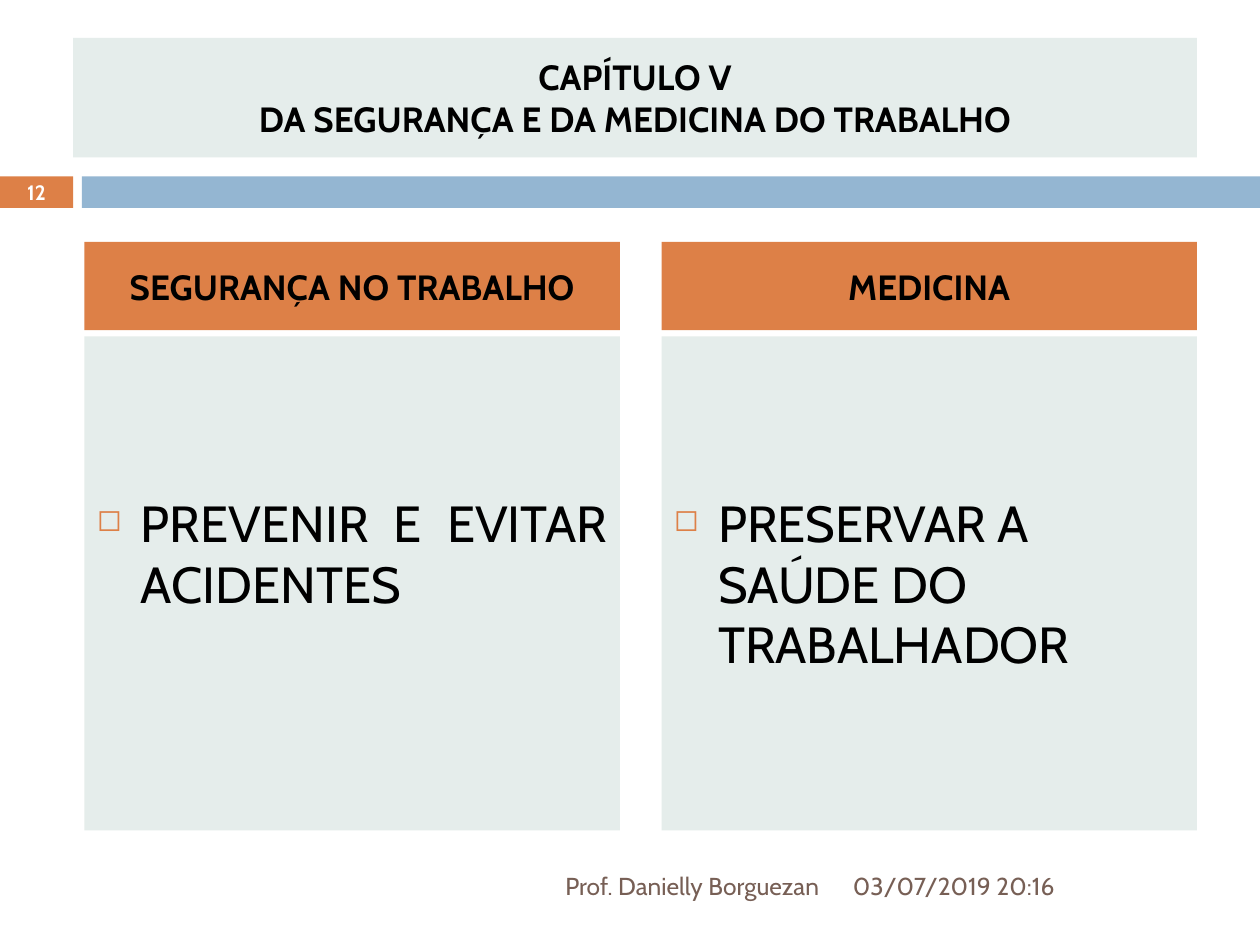
from lxml import etree
from pptx import Presentation
from pptx.dml.color import RGBColor
from pptx.enum.shapes import MSO_SHAPE
from pptx.enum.text import MSO_ANCHOR, PP_ALIGN
from pptx.oxml.ns import qn
from pptx.util import Pt

EMU_PER_PX = 9144  # 100 px to the inch
FONT = "Cabin"
ORANGE, BLUE, PALE = "DD8047", "94B6D2", "E5EDEB"
BLACK, WHITE, BROWN = "000000", "FFFFFF", "775F55"


def px(length):
    return length * EMU_PER_PX


def color(hex_code):
    return RGBColor.from_string(hex_code)


class SlideBuilder:
    def __init__(self, slide):
        self.shapes = slide.shapes

    def set_text(self, shape, text, size, ink, align, bold=False, anchor=MSO_ANCHOR.MIDDLE):
        frame = shape.text_frame
        frame.word_wrap = True
        frame.vertical_anchor = anchor
        paragraph = frame.paragraphs[0]
        paragraph.text = text
        paragraph.alignment = align
        font = paragraph.font
        font.name, font.size, font.bold = FONT, Pt(size), bold
        font.color.rgb = color(ink)

    def panel(self, left, top, width, height, fill):
        shape = self.shapes.add_shape(
            MSO_SHAPE.RECTANGLE, px(left), px(top), px(width), px(height))
        shape.shadow.inherit = False
        shape.fill.solid()
        shape.fill.fore_color.rgb = color(fill)
        shape.line.fill.background()
        return shape

    def heading(self, left, top, width, height, fill, text, size=20, ink=BLACK):
        shape = self.panel(left, top, width, height, fill)
        self.set_text(shape, text, size, ink, PP_ALIGN.CENTER, bold=True)

    def bullet_panel(self, left, top, width, height, text, align):
        shape = self.panel(left, top, width, height, PALE)
        shape.text_frame.margin_top = px(123)
        self.add_bullet(shape.text_frame.paragraphs[0])
        self.set_text(shape, text, 29, BLACK, align, anchor=MSO_ANCHOR.TOP)

    def add_bullet(self, paragraph):
        properties = paragraph._p.get_or_add_pPr()
        properties.set("marL", str(px(35)))
        properties.set("indent", str(px(-35)))
        bullet_color = etree.SubElement(properties, qn("a:buClr"))
        etree.SubElement(bullet_color, qn("a:srgbClr"), val=ORANGE)
        etree.SubElement(properties, qn("a:buSzPct"), val="60000")
        etree.SubElement(properties, qn("a:buChar"), char="◻")

    def footer(self, left, width, text, align):
        box = self.shapes.add_textbox(px(left), px(683), px(width), px(40))
        self.set_text(box, text, 14, BROWN, align)


def main():
    presentation = Presentation()
    presentation.slide_width, presentation.slide_height = px(1000), px(750)
    builder = SlideBuilder(presentation.slides.add_slide(presentation.slide_layouts[6]))

    builder.heading(0, 140, 58, 25, ORANGE, "12", size=11.9, ink=WHITE)
    builder.panel(65, 140, 935, 25, BLUE)
    builder.heading(58, 30, 892, 95, PALE,
                    "CAPÍTULO V\vDA SEGURANÇA E DA MEDICINA DO TRABALHO")

    columns = [
        ("SEGURANÇA NO TRABALHO", "PREVENIR E EVITAR ACIDENTES", PP_ALIGN.JUSTIFY),
        ("MEDICINA", "PRESERVAR A SAÚDE DO TRABALHADOR", PP_ALIGN.LEFT),
    ]
    column_width, column_step = 425, 458
    for index, (topic, purpose, align) in enumerate(columns):
        left = 67 + index * column_step
        builder.bullet_panel(left, 267, column_width, 392, purpose, align)
        builder.heading(left, 192, column_width, 70, ORANGE, topic)

    builder.footer(667, 292, "03/07/2019 20:16", PP_ALIGN.LEFT)
    builder.footer(67, 593, "Prof. Danielly Borguezan", PP_ALIGN.RIGHT)
    presentation.save("out.pptx")


if __name__ == "__main__":
    main()
